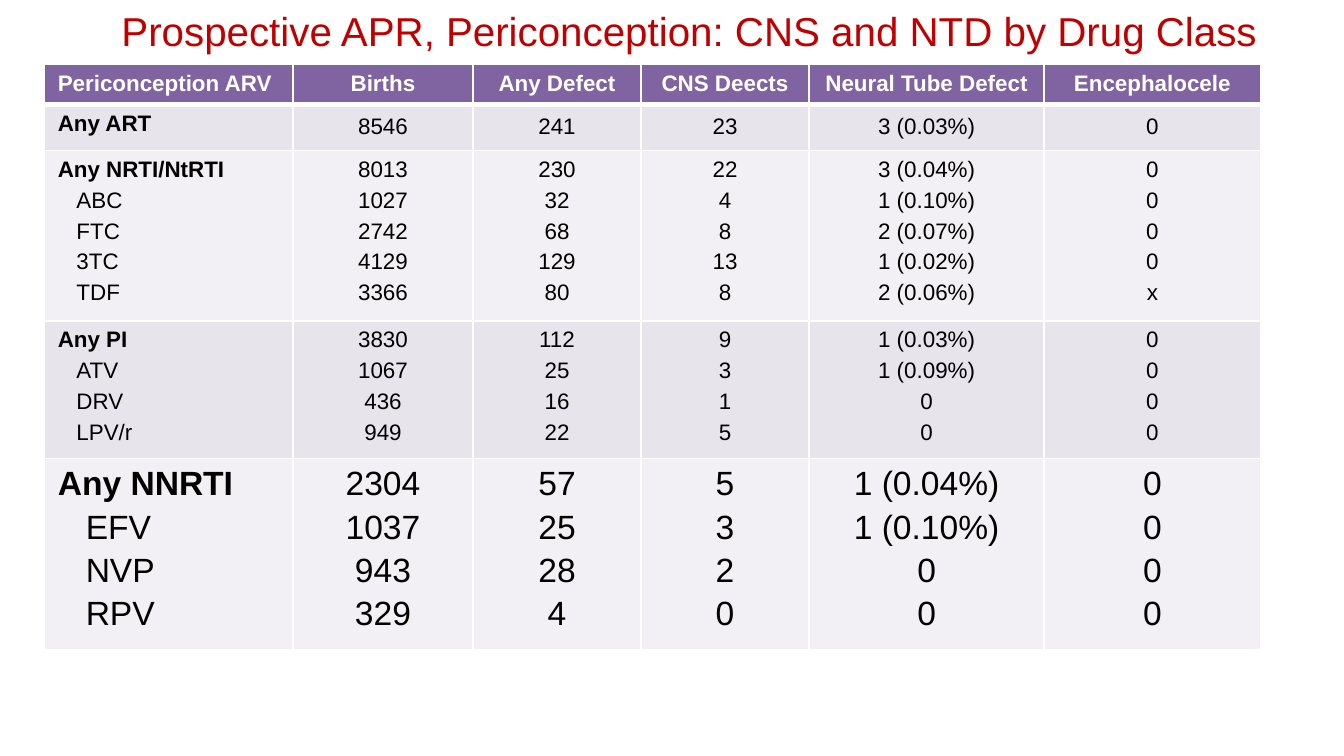
from lxml import etree
from pptx import Presentation
from pptx.dml.color import RGBColor
from pptx.enum import text
from pptx.oxml import ns
from pptx.util import Inches, Pt

FONT = "Arial"
RED = RGBColor(0xC0, 0x00, 0x00)
PURPLE = RGBColor(0x80, 0x64, 0xA2)
WHITE = RGBColor(0xFF, 0xFF, 0xFF)
BLACK = RGBColor(0x00, 0x00, 0x00)
BANDS = (RGBColor(0xE7, 0xE4, 0xEC), RGBColor(0xF2, 0xF0, 0xF4))

COLUMN_WIDTHS = (1.85, 1.34, 1.25, 1.25, 1.75, 1.61)
ROW_HEIGHTS = (0.15, 0.2, 0.8, 0.8, 0.6)
HEADINGS = ("Periconception ARV", "Births", "Any Defect", "CNS Deects",
            "Neural Tube Defect", "Encephalocele")

# Each drug class: text size, then one record per line of its table row
DRUG_CLASSES = (
    (12, (("Any ART", "8546", "241", "23", "3 (0.03%)", "0"),)),
    (12, (("Any NRTI/NtRTI", "8013", "230", "22", "3 (0.04%)", "0"),
          ("ABC", "1027", "32", "4", "1 (0.10%)", "0"),
          ("FTC", "2742", "68", "8", "2 (0.07%)", "0"),
          ("3TC", "4129", "129", "13", "1 (0.02%)", "0"),
          ("TDF", "3366", "80", "8", "2 (0.06%)", "x"))),
    (12, (("Any PI", "3830", "112", "9", "1 (0.03%)", "0"),
          ("ATV", "1067", "25", "3", "1 (0.09%)", "0"),
          ("DRV", "436", "16", "1", "0", "0"),
          ("LPV/r", "949", "22", "5", "0", "0"))),
    (18, (("Any NNRTI", "2304", "57", "5", "1 (0.04%)", "0"),
          ("EFV", "1037", "25", "3", "1 (0.10%)", "0"),
          ("NVP", "943", "28", "2", "0", "0"),
          ("RPV", "329", "4", "0", "0", "0"))),
)


def style_font(paragraph, size, color, bold=False):
    for span in paragraph.runs:
        span.font.name = FONT
        span.font.size = Pt(size)
        span.font.bold = bold
        span.font.color.rgb = color


def add_title(page, wording):
    box = page.shapes.add_textbox(Inches(0.47), Inches(-0.09),
                                  Inches(9.32), Inches(0.63))
    frame = box.text_frame
    frame.word_wrap = True
    frame.vertical_anchor = text.MSO_ANCHOR.MIDDLE
    frame.text = wording
    frame.paragraphs[0].alignment = text.PP_ALIGN.CENTER
    style_font(frame.paragraphs[0], 21.6, RED)


def set_borders(cell, bottom_width):
    properties = cell._tc.get_or_add_tcPr()
    sides = (("lnL", 1), ("lnR", 1), ("lnT", 1), ("lnB", bottom_width))
    for position, (side, width) in enumerate(sides):
        line = etree.Element(ns.qn(f"a:{side}"), w=str(Pt(width)))
        fill = etree.SubElement(line, ns.qn("a:solidFill"))
        etree.SubElement(fill, ns.qn("a:srgbClr"), val=str(WHITE))
        properties.insert(position, line)


def fill_cell(cell, lines, size, background, is_label, is_header=False):
    cell.fill.solid()
    cell.fill.fore_color.rgb = background
    set_borders(cell, 3 if is_header else 1)
    cell.text_frame.text = "\n".join(lines)
    for number, paragraph in enumerate(cell.text_frame.paragraphs):
        paragraph.space_before = Pt(2)
        paragraph.space_after = Pt(1)
        style_font(paragraph, size, WHITE if is_header else BLACK,
                   bold=is_header or (is_label and number == 0))
        if not is_label:
            paragraph.alignment = text.PP_ALIGN.CENTER
        elif number > 0:
            # Single drugs are indented under their class
            indent = Pt(size * 5 / 6)
            paragraph._p.get_or_add_pPr().set("marL", str(indent))


def add_drug_table(page):
    frame_height = Inches(4.35)
    frame = page.shapes.add_table(len(ROW_HEIGHTS), len(COLUMN_WIDTHS),
                                  Inches(0.33), Inches(0.48),
                                  Inches(9.05), frame_height)
    table = frame.table
    for column, width in zip(table.columns, COLUMN_WIDTHS):
        column.width = Inches(width)
    for row, height in zip(table.rows, ROW_HEIGHTS):
        row.height = Inches(height)
    # Row changes resize the frame, so its height is set last
    frame.height = frame_height

    # Header row
    for column, heading in enumerate(HEADINGS):
        fill_cell(table.cell(0, column), [heading], 12, PURPLE,
                  is_label=column == 0, is_header=True)

    # One banded row per drug class
    for row, (size, records) in enumerate(DRUG_CLASSES, start=1):
        for column, lines in enumerate(zip(*records)):
            fill_cell(table.cell(row, column), lines, size,
                      BANDS[(row - 1) % 2], is_label=column == 0)

    # Roomier figures in the overall row
    for column in range(1, len(HEADINGS)):
        cell = table.cell(1, column)
        cell.margin_left = cell.margin_right = Inches(0.13)
        cell.margin_top = cell.margin_bottom = Inches(0.07)


def main():
    deck = Presentation()
    # Widescreen, 16:9
    deck.slide_width = Inches(10)
    deck.slide_height = Inches(10 * 9 / 16)
    page = deck.slides.add_slide(deck.slide_layouts[6])
    add_title(page, "Prospective APR, Periconception: CNS and NTD by Drug Class")
    add_drug_table(page)
    deck.save("out.pptx")


if __name__ == "__main__":
    main()
